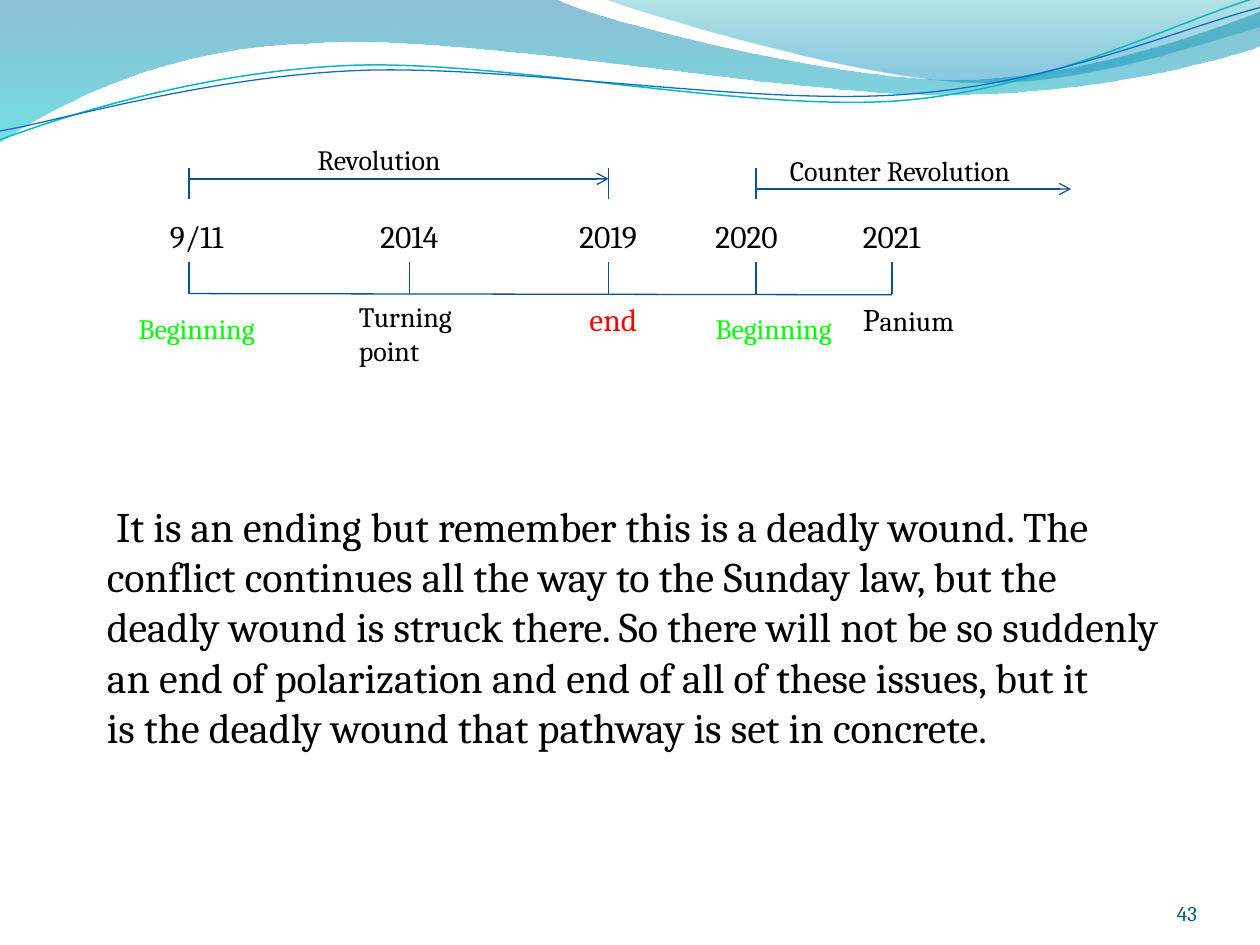
import math

from lxml import etree
from pptx import Presentation
from pptx import util as u
from pptx.dml.color import RGBColor
from pptx.enum import shapes, text
from pptx.oxml.ns import qn

BLACK = RGBColor(0x00, 0x00, 0x00)
GREEN = RGBColor(0x00, 0xFF, 0x00)
RED = RGBColor(0xFF, 0x00, 0x00)
NAVY = RGBColor(0x09, 0x52, 0x95)
PAGE_TEAL = RGBColor(0x04, 0x5D, 0x75)
LINE_TEAL = RGBColor(0x0A, 0xB8, 0xBF)
LINE_BLUE = RGBColor(0x0F, 0x6F, 0xC6)
DEEP_BLUE = RGBColor(0x00, 0x74, 0xA1)
AQUA = RGBColor(0x00, 0xC6, 0xCF)
TEAL = RGBColor(0x00, 0xA1, 0xA9)
SKY = RGBColor(0x00, 0x8B, 0xBF)

YEARS_Y, AXIS_Y, TICK = 1.67, 2.33, 0.25
TILT = 357.3
NO_BREAK_SPACE = chr(160)
# "~" stands for a space where the line must not break.
PARAGRAPH = (
    "~It is an ending but remember this is a~deadly wound. "
    "The conflict continues all~the way to the Sunday law, "
    "but the deadly~wound is struck there. So there will not~be so suddenly "
    "an end of polarization~and end of~all of~these issues, "
    "but it is~the deadly wound~that pathway~is~set in concrete."
).replace("~", NO_BREAK_SPACE)


class Deck:
    font = "Cambria"

    def __init__(self, prs):
        self.slide = prs.slides.add_slide(prs.slide_layouts[6])

    def outline(self, box, start, segments, close, rotation=0):
        """Freeform in a box; segments are (x, y) lines or (x1, y1, x2, y2, x, y) curves."""
        left, top, width, height = map(u.Inches, box)
        builder = self.slide.shapes.build_freeform(left, top)
        builder.add_line_segments([(left + width, top + height)], close=False)
        sp = builder.convert_to_shape()
        sp.shadow.inherit = False
        sp.rotation = rotation

        path = next(sp._element.iter(qn("a:path")))
        for child in list(path):
            path.remove(child)
        sin, cos = math.sin(math.radians(-rotation)), math.cos(math.radians(-rotation))

        def add(tag, coords):
            step = etree.SubElement(path, qn(tag))
            for x, y in zip(coords[::2], coords[1::2]):
                dx = u.Inches(x) - left - width / 2
                dy = u.Inches(y) - top - height / 2
                etree.SubElement(step, qn("a:pt"),
                                 x=str(round(dx * cos - dy * sin + width / 2)),
                                 y=str(round(dx * sin + dy * cos + height / 2)))

        add("a:moveTo", start)
        for seg in segments:
            add("a:lnTo" if len(seg) == 2 else "a:cubicBezTo", seg)
        if close:
            etree.SubElement(path, qn("a:close"))
        return sp

    def wave(self, box, start, segments, stops):
        """Filled shape; stops are (position, colour, opacity percent), top to bottom."""
        sp = self.outline(box, start, segments, True)
        sp.line.fill.background()
        sp.fill.gradient()
        sp.fill.gradient_angle = 270
        for stop, (position, color, _) in zip(sp.fill.gradient_stops, stops):
            stop.position = position
            stop.color.rgb = color
        colors = list(sp._element.spPr.iter(qn("a:srgbClr")))
        for clr, (_, _, opacity) in zip(colors, stops):
            etree.SubElement(clr, qn("a:alpha"), val=str(opacity * 1000))

    def curve(self, box, start, segments, color, width):
        sp = self.outline(box, start, segments, False, TILT)
        sp.fill.background()
        sp.line.color.rgb = color
        sp.line.width = u.Pt(width)

    def line(self, x1, y1, x2, y2, arrow=False):
        cx = self.slide.shapes.add_connector(
            shapes.MSO_CONNECTOR.STRAIGHT, *map(u.Inches, (x1, y1, x2, y2)))
        cx.line.color.rgb = NAVY
        cx.line.width = u.Pt(0.75)
        if arrow:
            etree.SubElement(cx.line._get_or_add_ln(), qn("a:tailEnd"), type="arrow")
        etree.SubElement(cx._element.spPr, qn("a:effectLst"))

    def tick(self, x, bottom):
        self.line(x, bottom, x, bottom - TICK)

    def text(self, box, runs, color=BLACK):
        """Text box with one paragraph; runs are (text, size)."""
        tb = self.slide.shapes.add_textbox(*map(u.Inches, box))
        tf = tb.text_frame
        tf.word_wrap = True
        tf.auto_size = text.MSO_AUTO_SIZE.SHAPE_TO_FIT_TEXT
        p = tf.paragraphs[0]
        for words, size in runs:
            r = p.add_run()
            r.text = words
            r.font.name = self.font
            r.font.size = u.Pt(size)
            r.font.color.rgb = color
        return tf

    def page_number(self, box, number):
        tf = self.text(box, [(number, 12)], PAGE_TEAL)
        tf.auto_size = text.MSO_AUTO_SIZE.NONE
        tf.vertical_anchor = text.MSO_ANCHOR.BOTTOM
        tf.margin_left = tf.margin_right = tf.margin_top = tf.margin_bottom = 0
        tf.paragraphs[0].alignment = text.PP_ALIGN.RIGHT


def draw_waves(deck):
    deck.wave((-0.01, -0.01, 10.02, 1.14), (0, 0), [
        (4.4, -0.01), (4.76, 0.17, 6.64, 0.63, 7.58, 0.63),
        (8.53, 0.63, 9.58, 0.26, 10, 0.09), (10.01, 0.36),
        (9.83, 0.44, 8.7, 0.76, 7.46, 0.75), (6.22, 0.75, 3.82, 0.28, 2.57, 0.34),
        (1.29, 0.36, 0.46, 0.83, -0.01, 1.13), (0, 0),
    ], [(0, DEEP_BLUE, 45), (1, AQUA, 55)])
    deck.wave((4.79, -0.01, 5.21, 0.7), (4.79, -0.01), [
        (5.09, 0.11, 6.82, 0.62, 7.69, 0.65), (8.56, 0.69, 9.61, 0.32, 10, 0.21),
        (10, 0), (4.79, -0.01),
    ], [(0, TEAL, 30), (0.8, SKY, 45)])
    deck.curve((-0.02, 0.22, 10.02, 0.71), (0, 1.11), [
        (0.48, 0.93, 1.58, 0.57, 2.77, 0.52), (3.95, 0.47, 5.93, 0.89, 7.13, 0.8),
        (8.33, 0.71, 9.38, 0.15, 9.98, -0.02),
    ], LINE_TEAL, 0.85)
    deck.curve((-0.02, 0.3, 10.03, 0.58), (0, 1.04), [
        (0.47, 0.96, 1.64, 0.61, 2.83, 0.56), (4.03, 0.51, 5.97, 0.84, 7.17, 0.75),
        (8.36, 0.67, 9.41, 0.21, 10, 0.06),
    ], LINE_BLUE, 0.75)


def draw_timeline(deck):
    deck.line(1.5, AXIS_Y, 7.08, AXIS_Y + 0.01)
    for x in (1.5, 3.25, 4.83, 6, 7.08):
        deck.tick(x, AXIS_Y)
    for x in (1.5, 4.83, 6):
        deck.tick(x, 1.58)
    deck.line(1.5, 1.42, 4.83, 1.42, arrow=True)
    deck.line(6, 1.5, 8.5, 1.5, arrow=True)

    for year, x, width in (("9/11", 1.25, 0.75), ("2014", 2.92, 0.92),
                           ("2019", 4.5, 0.92), ("2020", 5.58, 1.17),
                           ("2021", 6.75, 0.92)):
        deck.text((x, YEARS_Y, width, 0.4), [(year, 18)])

    deck.text((2.42, 1.08, 1.58, 0.37), [("Revolution", 16)])
    deck.text((6.17, 1.17, 2.33, 0.37), [("Counter Revolution", 16)])
    for x, width in ((1, 1.42), (5.58, 1.67)):
        deck.text((x, 2.42, width, 0.37), [("Beginning", 16)], GREEN)
    deck.text((2.75, AXIS_Y, 1.25, 0.64), [("Turning point", 16)])
    deck.text((4.58, AXIS_Y, 0.83, 0.4), [("end", 18)], RED)
    deck.text((6.75, AXIS_Y, 1.17, 0.4), [("P", 18), ("anium", 16)])


def main():
    prs = Presentation()
    prs.slide_width, prs.slide_height = u.Inches(10), u.Inches(7.5)
    deck = Deck(prs)
    draw_waves(deck)
    draw_timeline(deck)
    deck.text((0.75, 3.92, 8.67, 2.52), [(PARAGRAPH, 24)])
    deck.page_number((8.67, 6.95, 0.83, 0.4), "43")
    prs.save("out.pptx")


if __name__ == "__main__":
    main()
